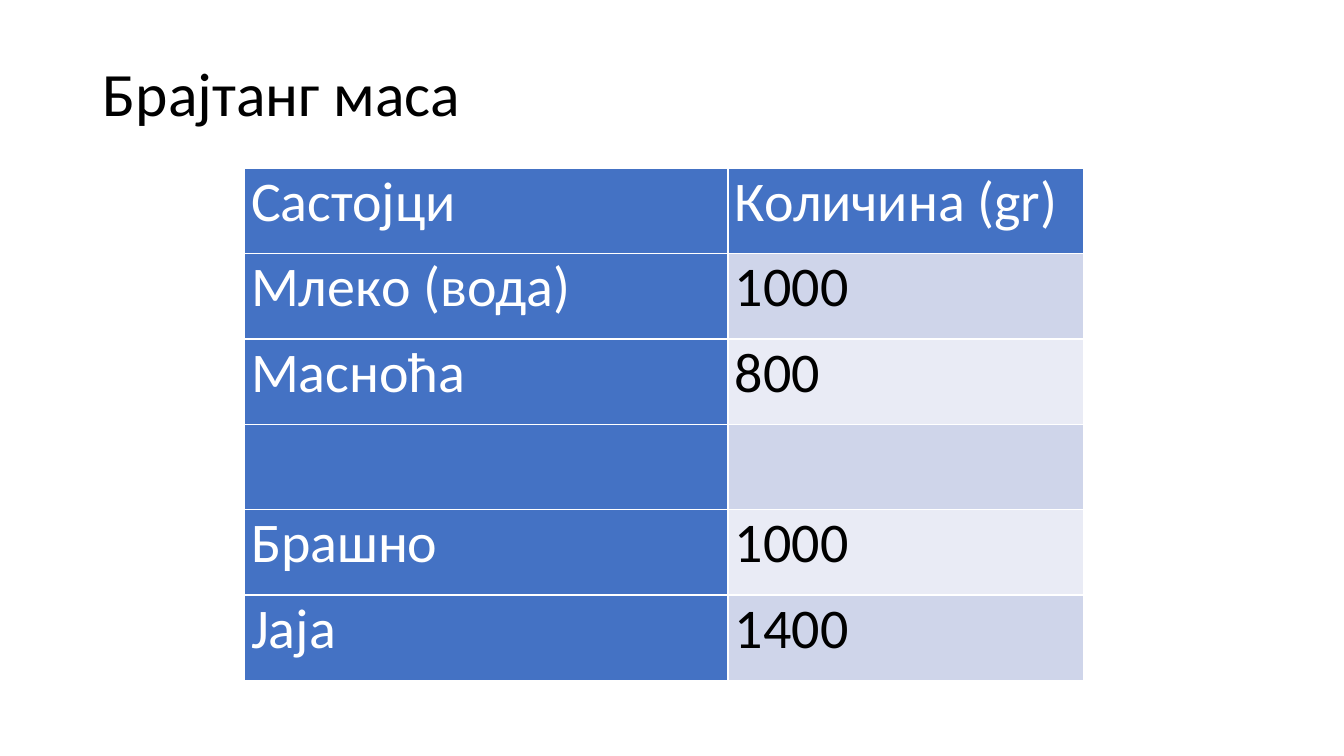
import pptx
import pptx.util
import pptx.dml.color
import pptx.enum.text
import lxml.etree
from dataclasses import dataclass

Inches = pptx.util.Inches
Pt = pptx.util.Pt
Align = pptx.enum.text.PP_ALIGN
Anchor = pptx.enum.text.MSO_ANCHOR


@dataclass(frozen=True)
class Theme:
    font: str = "Calibri"
    title: int = 44
    body: int = 40
    dark: str = "000000"
    light: str = "FFFFFF"
    head: str = "4472C4"
    bands: tuple = ("CFD5EA", "E9EBF5")
    rule: float = 1


THEME = Theme()
MIX = [
    ("Састојци", "Количина (gr)"),
    ("Млекo (вода)", "1000"),
    ("Масноћа", "800"),
    ("", ""),
    ("Брашно", "1000"),
    ("Јаја", "1400"),
]


def color(code):
    return pptx.dml.color.RGBColor.from_string(code)


def style(para, size, code):
    for run in para.runs:
        run.font.name = THEME.font
        run.font.size = Pt(size)
        run.font.bold = False
        run.font.color.rgb = color(code)


def border(cell):
    props = cell._tc.get_or_add_tcPr()
    uri = "{http://schemas.openxmlformats.org/drawingml/2006/main}"
    for spot, side in enumerate(("lnL", "lnR", "lnT", "lnB")):
        line = lxml.etree.Element(uri + side, w=str(Pt(THEME.rule)))
        fill = lxml.etree.SubElement(line, uri + "solidFill")
        lxml.etree.SubElement(fill, uri + "srgbClr", val=THEME.light)
        props.insert(spot, line)


def add_title(slide, box, text):
    frame = slide.shapes.add_textbox(*map(Inches, box)).text_frame
    frame.word_wrap = True
    frame.vertical_anchor = Anchor.MIDDLE
    frame.text = text
    para = frame.paragraphs[0]
    para.line_spacing = 0.9
    style(para, THEME.title, THEME.dark)


def fill_cell(cell, text, back, ink):
    cell.fill.solid()
    cell.fill.fore_color.rgb = color(back)
    border(cell)
    cell.margin_left = cell.margin_right = Inches(0.07)
    cell.margin_top = cell.margin_bottom = 0
    cell.text_frame.text = text
    para = cell.text_frame.paragraphs[0]
    para.alignment = Align.JUSTIFY
    style(para, THEME.body, ink)


def add_grid(slide, box, data, first):
    left, top, width, height = box
    frame = slide.shapes.add_table(len(data), 2, *map(Inches, box))
    table = frame.table
    table.columns[0].width = Inches(first)
    table.columns[1].width = Inches(width - first)
    for row, texts in enumerate(data):
        table.rows[row].height = Inches(height / len(data))
        for col, text in enumerate(texts):
            main = row == 0 or col == 0
            back = THEME.head if main else THEME.bands[(row - 1) % 2]
            ink = THEME.light if main else THEME.dark
            fill_cell(table.cell(row, col), text, back, ink)


def main():
    deck = pptx.Presentation()
    deck.slide_width = Inches(13.33)
    deck.slide_height = Inches(7.5)
    slide = deck.slides.add_slide(deck.slide_layouts[6])
    add_title(slide, (0.92, 0.4, 11.5, 1.12), "Брајтанг маса")
    add_grid(slide, (2.42, 1.67, 8.33, 5.08), MIX, 4.8)
    deck.save("out.pptx")


if __name__ == "__main__":
    main()
